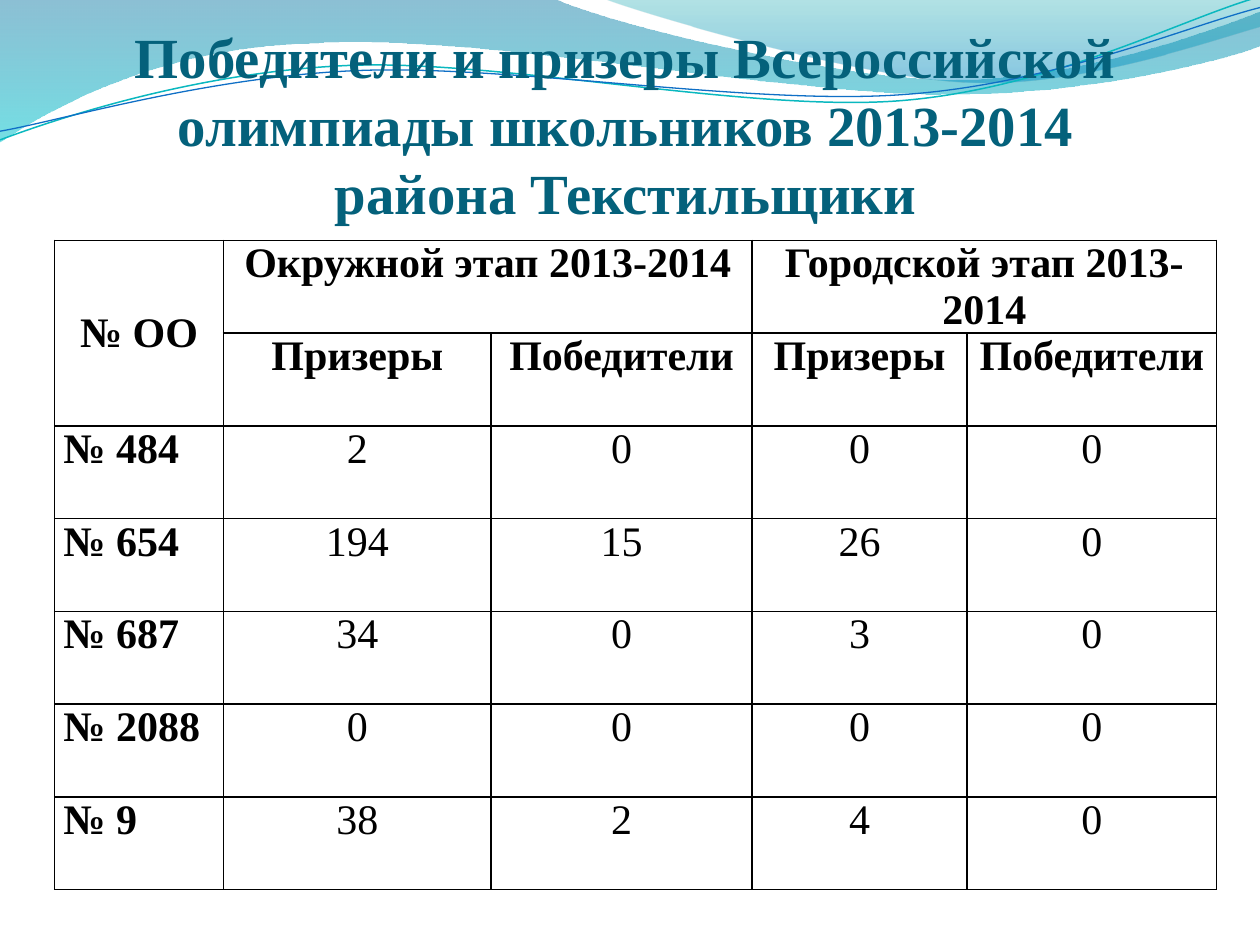
from dataclasses import dataclass

from lxml.etree import SubElement
from pptx import Presentation
from pptx.dml.color import RGBColor
from pptx.enum.text import MSO_ANCHOR as Anchor, MSO_AUTO_SIZE as AutoSize, PP_ALIGN as Align
from pptx.oxml.ns import qn
from pptx.util import Pt


@dataclass(frozen=True)
class Theme:
    font: str = "Times New Roman"
    title_size: float = 32.4
    table_size: float = 24
    title_color: str = "04617B"
    ink: str = "000000"
    # Gradient stops: colour, position, opacity in percent
    wide_wave: tuple = (("0074A1", 0, 45), ("00C6CF", 1, 55))
    right_wave: tuple = (("00A1A9", 0, 30), ("008BBF", 0.8, 45))
    teal_line: str = "0AB8BF"
    blue_line: str = "0F6FC6"


THEME = Theme()

# Outlines in points: a start, then lines (2 numbers) or cubic curves (6 numbers)
WIDE_WAVE = [
    (0, 0), (316.8, -0.7),
    (342.7, 12.2, 478.1, 45.4, 545.8, 45.4),
    (614.2, 45.4, 689.8, 18.7, 720, 6.5),
    (720.7, 25.9),
    (707.8, 31.7, 626.4, 54.7, 537.1, 54),
    (447.8, 54, 275, 20.2, 185, 24.5),
    (92.9, 25.9, 33.1, 59.8, -0.7, 81.4),
]
RIGHT_WAVE = [
    (344.9, -0.7),
    (366.5, 7.9, 491, 44.6, 553.7, 46.8),
    (616.3, 49.7, 691.9, 23, 720, 15.1),
    (720, 0),
]
# The two thin lines are given before their rotation
LINE_ROTATION = 357.3
TEAL_LINE = [
    (-1.4, 63),
    (33.8, 51.7, 114.1, 29.4, 199.8, 29.9),
    (284.9, 30.3, 425.8, 67.3, 512.4, 64.9),
    (599, 62.4, 676.5, 25.7, 720.2, 15.5),
]
BLUE_LINE = [
    (-1.1, 58),
    (32.9, 53.8, 118.3, 32.5, 204.1, 33),
    (290.6, 33.4, 428.9, 63.8, 515.5, 61.4),
    (601.4, 59.6, 678.5, 30.1, 721.4, 21.3),
]

TITLE = "Победители и призеры Всероссийской олимпиады школьников 2013-2014\vрайона Текстильщики"
COLUMN_WIDTHS = [96.5, 153, 149, 123, 142.5]
ROW_HEIGHT = 53
HEADER_ROWS = 2
ROWS = [
    ["№ ОО", "Окружной этап 2013-2014", "", "Городской этап 2013-2014", ""],
    ["", "Призеры", "Победители", "Призеры", "Победители"],
    ["№ 484", "2", "0", "0", "0"],
    ["№ 654", "194", "15", "26", "0"],
    ["№ 687", "34", "0", "3", "0"],
    ["№ 2088", "0", "0", "0", "0"],
    ["№ 9", "38", "2", "4", "0"],
]
MERGES = [((0, 0), (1, 0)), ((0, 1), (0, 2)), ((0, 3), (0, 4))]


def rgb(color):
    return RGBColor.from_string(color)


def add_outline(slide, outline, close):
    """Build a freeform, then join the three points of each curve into one cubic segment."""
    points = [(Pt(segment[i]), Pt(segment[i + 1]))
              for segment in outline for i in range(0, len(segment), 2)]
    builder = slide.shapes.build_freeform(*points[0])
    builder.add_line_segments(points[1:], close=close)
    shape = builder.convert_to_shape()
    shape.shadow.inherit = False
    lines = iter(list(shape.element.spPr.iter(qn("a:lnTo"))))
    for segment in outline[1:]:
        curve = next(lines)
        if len(segment) == 6:
            curve.tag = qn("a:cubicBezTo")
            for extra in (next(lines), next(lines)):
                curve.append(extra[0])
                extra.getparent().remove(extra)
    return shape


def add_wave(slide, outline, stops):
    shape = add_outline(slide, outline, close=True)
    shape.line.fill.background()
    shape.fill.gradient()
    shape.fill.gradient_angle = 270
    for stop, (color, position, _) in zip(shape.fill.gradient_stops, stops):
        stop.color.rgb = rgb(color)
        stop.position = position
    for element, (_, _, opacity) in zip(shape.element.spPr.iter(qn("a:srgbClr")), stops):
        SubElement(element, qn("a:alpha")).set("val", str(opacity * 1000))


def add_wave_line(slide, outline, color, width):
    shape = add_outline(slide, outline, close=False)
    shape.rotation = LINE_ROTATION
    shape.fill.background()
    shape.line.color.rgb = rgb(color)
    shape.line.width = Pt(width)


def format_paragraph(paragraph, size, color, bold, alignment):
    paragraph.alignment = alignment
    font = paragraph.font
    font.name, font.size, font.bold = THEME.font, Pt(size), bold
    font.color.rgb = rgb(color)


def set_title(slide):
    title = slide.shapes.title
    title.element.getparent().append(title.element)  # in front of the waves
    title.left, title.top, title.width, title.height = Pt(36.7), Pt(15), Pt(641.5), Pt(153.5)
    frame = title.text_frame
    frame.text = TITLE
    frame.word_wrap = True
    frame.auto_size = AutoSize.NONE
    frame.vertical_anchor = Anchor.BOTTOM
    frame.margin_left = frame.margin_right = 0
    frame.margin_top, frame.margin_bottom = Pt(3.6), Pt(39.5)
    format_paragraph(frame.paragraphs[0], THEME.title_size, THEME.title_color, True, Align.CENTER)


def set_borders(cell):
    properties = cell._tc.get_or_add_tcPr()
    for side in ("lnL", "lnR", "lnT", "lnB"):
        line = SubElement(properties, qn(f"a:{side}"), w=str(Pt(1)))
        fill = SubElement(line, qn("a:solidFill"))
        SubElement(fill, qn("a:srgbClr"), val=THEME.ink)


def fill_cell(cell, text, bold, alignment):
    cell.margin_left = cell.margin_right = Pt(5)
    cell.margin_top = cell.margin_bottom = 0
    cell.vertical_anchor = Anchor.TOP
    set_borders(cell)
    cell.fill.background()
    cell.text = text
    format_paragraph(cell.text_frame.paragraphs[0], THEME.table_size, THEME.ink, bold, alignment)


def add_results_table(slide):
    table = slide.shapes.add_table(
        len(ROWS), len(COLUMN_WIDTHS), Pt(31.2), Pt(137.3),
        Pt(sum(COLUMN_WIDTHS)), Pt(ROW_HEIGHT * len(ROWS))).table
    for column, width in zip(table.columns, COLUMN_WIDTHS):
        column.width = Pt(width)
    for row_index, texts in enumerate(ROWS):
        table.rows[row_index].height = Pt(ROW_HEIGHT)
        is_header = row_index < HEADER_ROWS
        for column_index, text in enumerate(texts):
            is_school = column_index == 0 and not is_header
            fill_cell(table.cell(row_index, column_index), text, is_header or is_school,
                      Align.JUSTIFY if is_school else Align.CENTER)
    for first, last in MERGES:
        table.cell(*first).merge(table.cell(*last))
    table.cell(0, 0).vertical_anchor = Anchor.MIDDLE


def main():
    presentation = Presentation()
    presentation.slide_width, presentation.slide_height = Pt(720), Pt(540)
    slide = presentation.slides.add_slide(presentation.slide_layouts.get_by_name("Title Only"))
    add_wave(slide, WIDE_WAVE, THEME.wide_wave)
    add_wave(slide, RIGHT_WAVE, THEME.right_wave)
    add_wave_line(slide, TEAL_LINE, THEME.teal_line, 0.85)
    add_wave_line(slide, BLUE_LINE, THEME.blue_line, 0.75)
    set_title(slide)
    add_results_table(slide)
    presentation.save("out.pptx")


if __name__ == "__main__":
    main()
